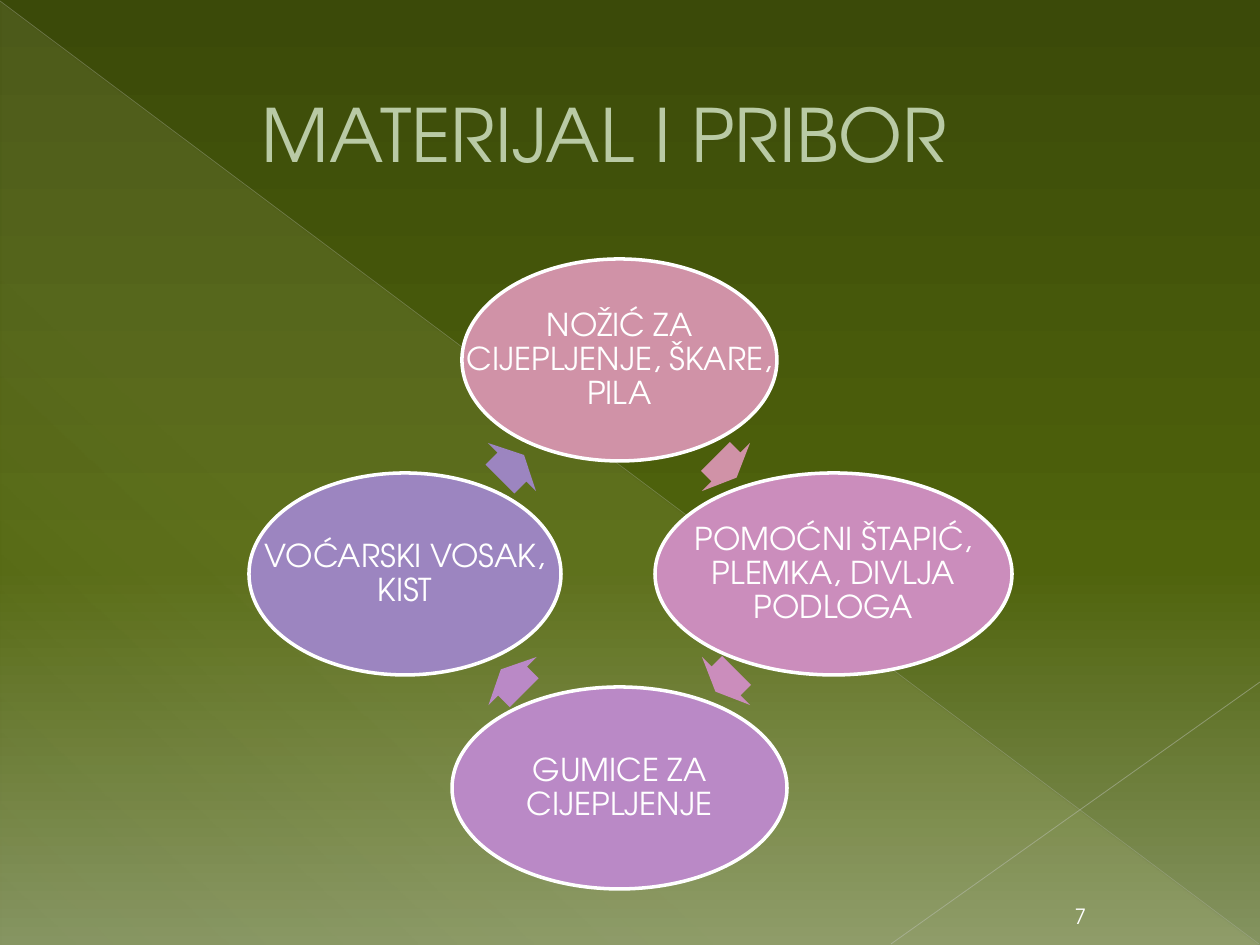
from dataclasses import dataclass

from lxml import etree
from pptx import Presentation
from pptx.dml.color import RGBColor
from pptx.enum.shapes import MSO_CONNECTOR, MSO_SHAPE
from pptx.enum.text import MSO_ANCHOR, PP_ALIGN
from pptx.oxml.ns import qn
from pptx.util import Emu, Pt

STRAIGHT = MSO_CONNECTOR.STRAIGHT
TRIANGLE, OVAL, ARROW = (MSO_SHAPE.RIGHT_TRIANGLE, MSO_SHAPE.OVAL,
                         MSO_SHAPE.RIGHT_ARROW)
MIDDLE, BOTTOM = MSO_ANCHOR.MIDDLE, MSO_ANCHOR.BOTTOM
LEFT, CENTER = PP_ALIGN.LEFT, PP_ALIGN.CENTER
EMU_PER_PX = 914400 / 126
WIDTH, HEIGHT = 1260, 945


@dataclass(frozen=True)
class Theme:
    font: str = "TeX Gyre Adventor"
    title_size: int = 42
    body_size: int = 18
    number_size: int = 12
    title: str = "B9CAA5"
    text: str = "FFFFFF"
    # Gradient stops: position, colour, opacity (all in percent)
    backdrop: tuple = ((0, "3B4A09", 100), (60, "4F630C", 100),
                       (100, "849360", 100))
    sheen: tuple = ((0, "FEFAC9", 10), (70, "FEFAC9", 8), (100, "FEFAC9", 1))
    diagonal: str = "BABDB3"
    corner: str = "C1C4BC"


THEME = Theme()

# Label, oval width, arrow width, colour; clockwise from the top
STEPS = [
    ("NOŽIĆ ZA CIJEPLJENJE, ŠKARE, PILA", 315, 30, "D092A7"),
    ("POMOĆNI ŠTAPIĆ, PLEMKA, DIVLJA PODLOGA", 357, 30, "CB8DBC"),
    ("GUMICE ZA CIJEPLJENJE", 335, 33, "BA89C6"),
    ("VOĆARSKI VOSAK, KIST", 312, 34, "9C85C0"),
]


def px(n):
    return Emu(round(n * EMU_PER_PX))


def rgb(color):
    return RGBColor.from_string(color)


def set_alpha(clr, percent):
    etree.SubElement(clr, qn("a:alpha"), val=str(percent * 1000))


def set_gradient(props, stops, angle):
    """Replace the solid fill inside props by a linear gradient."""
    grad = etree.Element(qn("a:gradFill"), rotWithShape="1")
    gs_lst = etree.SubElement(grad, qn("a:gsLst"))
    for pos, color, alpha in stops:
        gs = etree.SubElement(gs_lst, qn("a:gs"), pos=str(pos * 1000))
        clr = etree.SubElement(gs, qn("a:srgbClr"), val=color)
        if alpha < 100:
            set_alpha(clr, alpha)
    etree.SubElement(grad, qn("a:lin"), ang=str(angle * 60000), scaled="0")
    props.replace(props.find(qn("a:solidFill")), grad)


def add_shape(s, kind, box, color, line=None):
    sp = s.shapes.add_shape(kind, *map(px, box))
    sp.shadow.inherit = False
    sp.fill.solid()
    sp.fill.fore_color.rgb = rgb(color)
    if line:
        sp.line.color.rgb = rgb(line)
        sp.line.width = Pt(2)
    else:
        sp.line.fill.background()
    return sp


def add_line(s, start, end, color, width, alpha):
    ln = s.shapes.add_connector(STRAIGHT, *map(px, start + end))
    ln.line.color.rgb = rgb(color)
    ln.line.width = Pt(width)
    sp_pr = ln._element.spPr
    set_alpha(sp_pr.find(".//" + qn("a:srgbClr")), alpha)
    etree.SubElement(sp_pr, qn("a:effectLst"))


def add_text(s, text, box, size=THEME.body_size, color=THEME.text,
             align=CENTER, anchor=MIDDLE, inset=(13, 6), spacing=1.0):
    tf = s.shapes.add_textbox(*map(px, box)).text_frame
    tf.word_wrap = True
    tf.vertical_anchor = anchor
    tf.margin_left = tf.margin_right = px(inset[0])
    tf.margin_top = tf.margin_bottom = px(inset[1])
    p = tf.paragraphs[0]
    p.alignment = align
    p.line_spacing = spacing
    r = p.add_run()
    r.text = text
    r.font.name = THEME.font
    r.font.size = Pt(size)
    r.font.color.rgb = rgb(color)
    return p


def add_backdrop(s, box):
    x, y, w, h = box
    s.background.fill.solid()
    set_gradient(s._element.find(".//" + qn("p:bgPr")), THEME.backdrop, 90)

    # Pale triangle with its edge, and the line across the corner
    sp = add_shape(s, TRIANGLE, (x + 1, y + 2, w - 2, h - 2), "FEFAC9")
    set_gradient(sp._element.spPr, THEME.sheen, 133)
    add_line(s, (x, y + 1), (x + w - 1, y + h - 1), THEME.diagonal, 0.39, 35)
    add_line(s, (x + w, y + 682), (x + 891, y + h - 1), THEME.corner, 0.47, 45)


def add_title(s, box):
    p = add_text(s, "MATERIJAL I PRIBOR", box, size=THEME.title_size,
                 color=THEME.title, align=LEFT)
    p._p.get_or_add_pPr().set("marL", str(px(186)))


def add_cycle(s, box):
    """Ovals on a ring, with an arrow halfway between each pair."""
    x, y, w, h = box
    oval_h, arrow_h = 202, 68
    radius = (h - oval_h) // 2
    cx, cy = x + 370, y + h // 2
    directions = [(0, -1), (1, 0), (0, 1), (-1, 0)]
    for i, (label, oval_w, arrow_w, color) in enumerate(STEPS):
        dx, dy = directions[i]
        nx, ny = directions[(i + 1) % len(directions)]

        oval = (cx + dx * radius - oval_w // 2,
                cy + dy * radius - oval_h // 2, oval_w, oval_h)
        add_shape(s, OVAL, oval, color, line=THEME.text)
        add_text(s, label, oval, inset=(4, 4), spacing=0.9)

        arrow = (cx + (dx + nx) * radius // 2 - arrow_w // 2,
                 cy + (dy + ny) * radius // 2 - arrow_h // 2,
                 arrow_w, arrow_h)
        sp = add_shape(s, ARROW, arrow, color)
        sp.adjustments[0] = 0.6
        sp.adjustments[1] = 0.5
        sp.rotation = 45 + 90 * i


def main():
    prs = Presentation()
    prs.slide_width, prs.slide_height = px(WIDTH), px(HEIGHT)
    s = prs.slides.add_slide(prs.slide_layouts[6])
    add_backdrop(s, (0, 0, WIDTH, HEIGHT))
    add_title(s, (63, 37, 1134, 193))
    add_text(s, "7", (1046, 893, 69, 42), size=THEME.number_size,
             anchor=BOTTOM)
    add_cycle(s, (249, 259, 763, 630))
    prs.save("out.pptx")


if __name__ == "__main__":
    main()
